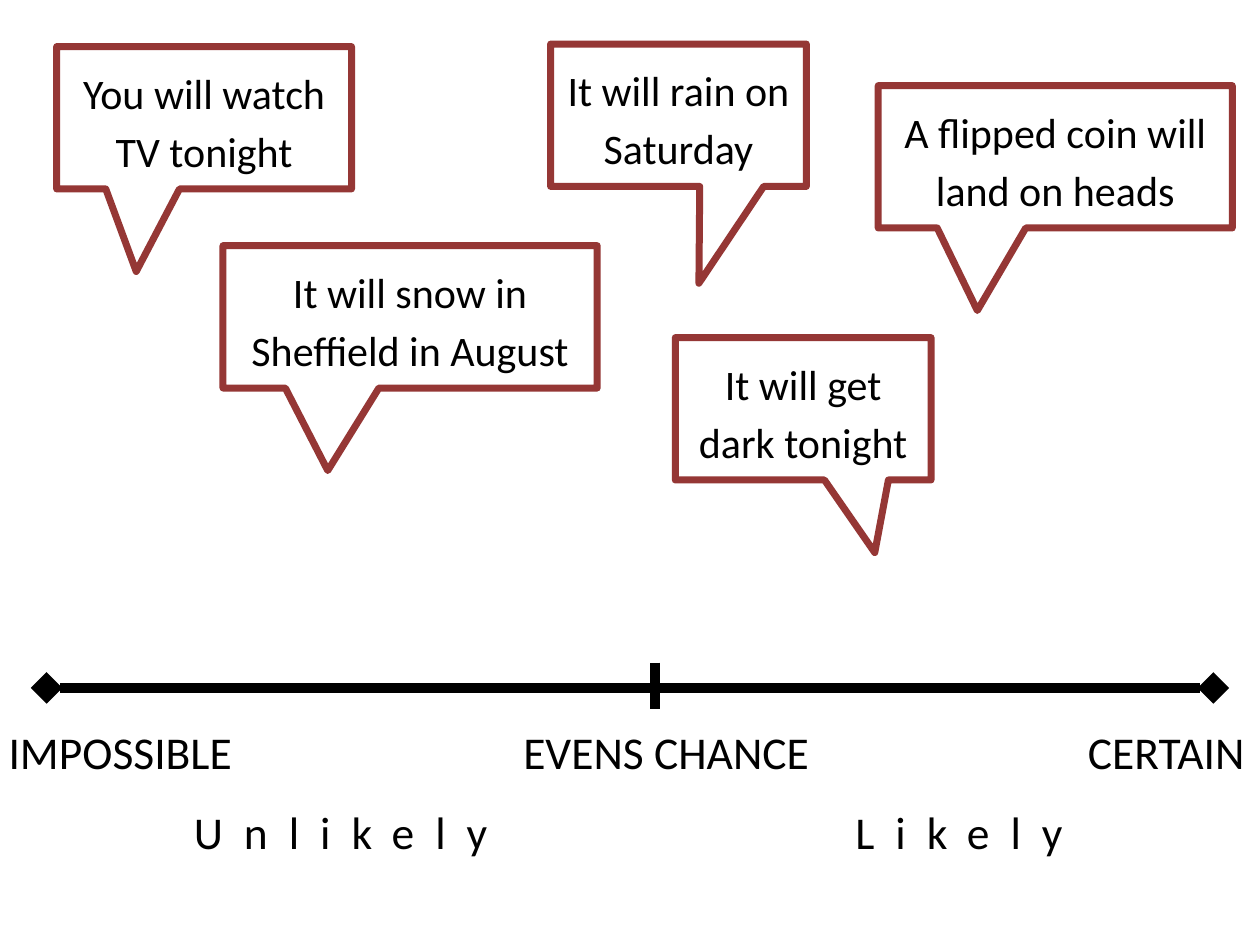
from lxml import etree
from pptx import Presentation
from pptx import util as u
from pptx.dml.color import RGBColor
from pptx.enum import shapes, text
from pptx.oxml.ns import qn

COLORS = {"ink": "000000", "callout": "953735"}
FONT = "Calibri"

# left, top, width, height, pointer adjustments, statement
CALLOUTS = [
    (0.45, 0.37, 2.34, 1.13, (-0.23, 1.08), "You will watch TV tonight"),
    (1.77, 1.95, 2.97, 1.13, (-0.22, 1.08), "It will snow in Sheffield in August"),
    (5.36, 2.68, 2.03, 1.13, (0.28, 1.01), "It will get dark tonight"),
    (4.37, 0.35, 2.03, 1.13, (0.08, 1.18), "It will rain on Saturday"),
    (6.97, 0.68, 2.81, 1.13, (-0.22, 1.08), "A flipped coin will land on heads"),
]


def style_line(line, color, width):
    line.color.rgb = RGBColor.from_string(COLORS[color])
    line.width = u.Pt(width)


def add_text(paragraph, wording, size, alignment):
    paragraph.alignment = alignment
    paragraph.line_spacing = 1.15
    paragraph.space_after = u.Pt(10)
    run = paragraph.add_run()
    run.text = wording
    run.font.name = FONT
    run.font.size = u.Pt(size)
    run.font.color.rgb = RGBColor.from_string(COLORS["ink"])
    return run


def set_tabs(paragraph, stops):
    tab_list = etree.SubElement(paragraph._p.get_or_add_pPr(), qn("a:tabLst"))
    for position, alignment in stops:
        etree.SubElement(tab_list, qn("a:tab"),
                         pos=str(u.Inches(position)), algn=alignment)


def add_callout(slide, left, top, width, height, pointer, statement):
    shape = slide.shapes.add_shape(
        shapes.MSO_SHAPE.RECTANGULAR_CALLOUT,
        u.Inches(left), u.Inches(top), u.Inches(width), u.Inches(height))
    shape.shadow.inherit = False
    shape.adjustments[0], shape.adjustments[1] = pointer
    shape.fill.background()
    style_line(shape.line, "callout", 4)
    etree.SubElement(shape.line._get_or_add_ln(), qn("a:round"))
    frame = shape.text_frame
    frame.word_wrap = True
    frame.vertical_anchor = text.MSO_ANCHOR.MIDDLE
    add_text(frame.paragraphs[0], statement, 24, text.PP_ALIGN.CENTER)


def add_line(slide, start_x, start_y, end_x, end_y):
    connector = slide.shapes.add_connector(
        shapes.MSO_CONNECTOR.STRAIGHT,
        u.Inches(start_x), u.Inches(start_y), u.Inches(end_x), u.Inches(end_y))
    style_line(connector.line, "ink", 6)
    etree.SubElement(connector._element.spPr, qn("a:effectLst"))
    return connector


def add_scale(slide, left, top, width):
    # Axis with diamond ends and a middle tick
    axis_y = top + 0.2
    axis = add_line(slide, left + 0.4, axis_y, left + width - 0.41, axis_y)
    for end in ("a:headEnd", "a:tailEnd"):
        etree.SubElement(axis.line._get_or_add_ln(), qn(end), type="diamond")
    add_line(slide, left + 5.23, top, left + 5.23, top + 0.37)

    # Labels, lined up by tab stops
    box = slide.shapes.add_textbox(
        u.Inches(left), u.Inches(top + 0.37), u.Inches(width), u.Inches(1.19))
    frame = box.text_frame
    frame.word_wrap = True
    fixed_points = frame.paragraphs[0]
    add_text(fixed_points, "IMPOSSIBLE\tEVENS CHANCE\tCERTAIN", 26,
             text.PP_ALIGN.LEFT)
    set_tabs(fixed_points, [(5.22, "ctr"), (9.81, "r")])
    ranges = frame.add_paragraph()
    run = add_text(ranges, "\tUnlikely\tLikely", 26, text.PP_ALIGN.LEFT)
    run.font._element.set("spc", "1200")
    set_tabs(ranges, [(1.47, "l"), (6.72, "l")])


def main():
    presentation = Presentation()
    presentation.slide_width = u.Inches(10)
    presentation.slide_height = u.Inches(7.5)
    slide = presentation.slides.add_slide(presentation.slide_layouts[6])
    add_scale(slide, -0.03, 5.26, 10.07)
    for callout in CALLOUTS:
        add_callout(slide, *callout)
    presentation.save("out.pptx")


if __name__ == "__main__":
    main()
